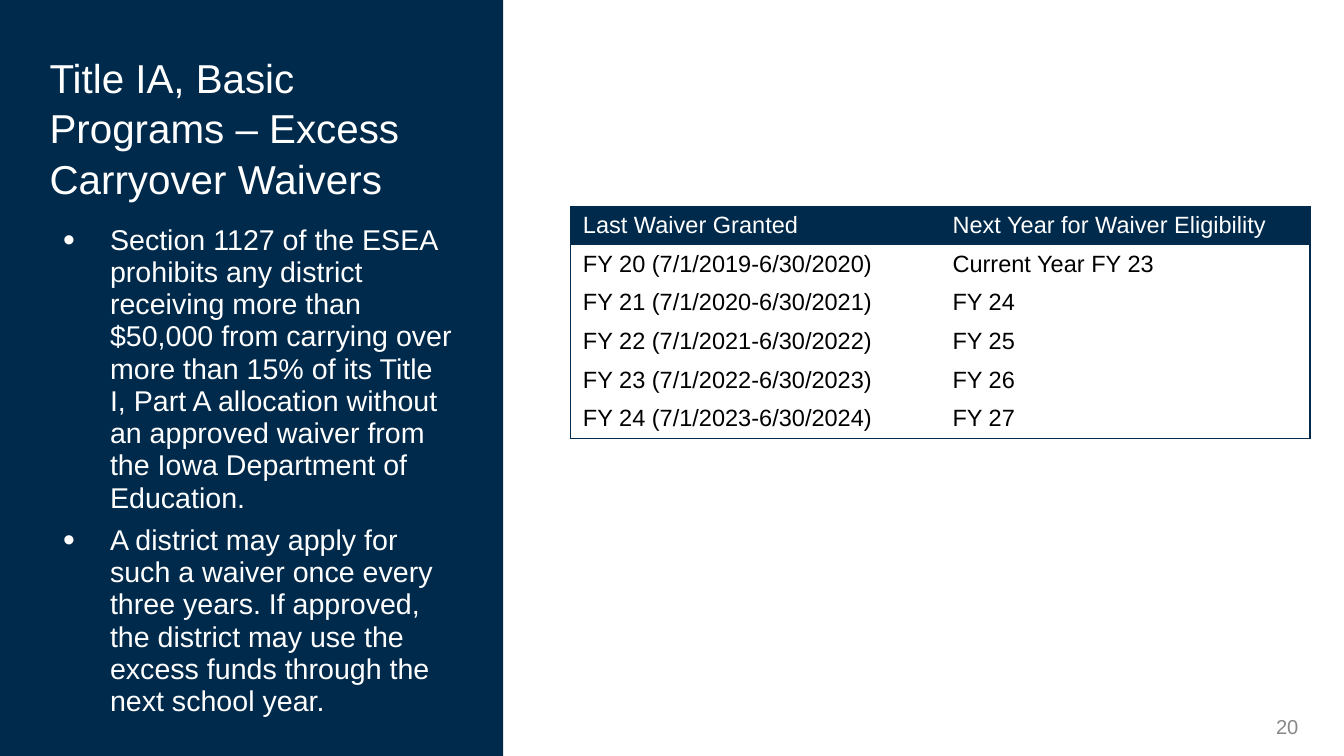
from lxml import etree
from pptx import Presentation
from pptx import util as u
from pptx.dml import color
from pptx.enum import shapes, text
from pptx.oxml import ns

COLORS = {"navy": "002A4B", "white": "FFFFFF", "black": "000000", "gray": "888888"}
TITLE = "Title IA, Basic Programs – Excess Carryover Waivers"
POINTS = [
    "Section 1127 of the ESEA prohibits any district receiving more than $50,000 from "
    "carrying over more than 15% of its Title I, Part A allocation without an approved "
    "waiver from the Iowa Department of Education.",
    "A district may apply for such a waiver once every three years. If approved, the "
    "district may use the excess funds through the next school year.",
]
WAIVERS = [
    ("Last Waiver Granted", "Next Year for Waiver Eligibility"),
    ("FY 20 (7/1/2019-6/30/2020)", "Current Year FY 23"),
    ("FY 21 (7/1/2020-6/30/2021)", "FY 24"),
    ("FY 22 (7/1/2021-6/30/2022)", "FY 25"),
    ("FY 23 (7/1/2022-6/30/2023)", "FY 26"),
    ("FY 24 (7/1/2023-6/30/2024)", "FY 27"),
]


def rgb(name):
    """Return the named colour."""
    return color.RGBColor.from_string(COLORS[name])


def apply(target, values):
    """Set each attribute in values on target."""
    for name, value in values.items():
        setattr(target, name, value)


def place(shape, box):
    """Move and size a shape to a box in points."""
    apply(shape, dict(zip(("left", "top", "width", "height"), map(u.Pt, box))))


def write(frame, lines, size, shade, para_values):
    """Fill a text frame with one paragraph for each line."""
    frame.text = "\n".join(lines)
    for para in frame.paragraphs:
        apply(para, para_values)
        for span in para.runs:
            apply(span.font, {"name": "Arial", "size": u.Pt(size), "bold": False})
            span.font.color.rgb = rgb(shade)


def frame_values(anchor):
    """Return the common text frame settings."""
    return {"word_wrap": True, "auto_size": text.MSO_AUTO_SIZE.NONE,
            "vertical_anchor": anchor,
            "margin_left": u.Pt(7.2), "margin_right": u.Pt(7.2),
            "margin_top": u.Pt(3.6), "margin_bottom": u.Pt(3.6)}


def add_panel(page, box, shade, depth):
    """Add a plain panel at the given depth behind the text."""
    panel = page.shapes.add_shape(shapes.MSO_SHAPE.RECTANGLE, *map(u.Pt, box))
    panel.shadow.inherit = False
    panel.fill.solid()
    panel.fill.fore_color.rgb = rgb(shade)
    panel.line.fill.background()
    panel.element.getparent().insert(2 + depth, panel.element)


def add_bullet(para):
    """Give a paragraph a hanging white bullet."""
    props = para._p.get_or_add_pPr()
    apply_indent = {"marL": u.Pt(36), "indent": u.Pt(-28)}
    for name, value in apply_indent.items():
        props.set(name, str(int(value)))
    tint = etree.SubElement(props, ns.qn("a:buClr"))
    etree.SubElement(tint, ns.qn("a:srgbClr"), val=COLORS["white"])
    etree.SubElement(props, ns.qn("a:buSzPct"), val="118000")
    etree.SubElement(props, ns.qn("a:buFont"), typeface="Arial")
    etree.SubElement(props, ns.qn("a:buChar"), char="•")


def fill_sidebar(page, box):
    """Place the title and the bullet list in the sidebar."""
    left, top, width, height = box
    title, body = page.shapes.title, page.placeholders[1]
    title_height = 103
    place(title, (left, top, width, title_height))
    place(body, (left, top + title_height, width, height - title_height))
    for shape in (title, body):
        apply(shape.text_frame, frame_values(text.MSO_ANCHOR.TOP))
    aligned = {"alignment": text.PP_ALIGN.LEFT}
    write(title.text_frame, [TITLE], 24, "white",
          {**aligned, "line_spacing": 1.04, "space_before": u.Pt(0)})
    write(body.text_frame, POINTS, 17, "white",
          {**aligned, "line_spacing": 0.94, "space_before": u.Pt(6)})
    for para in body.text_frame.paragraphs:
        add_bullet(para)


def set_borders(cell, sides):
    """Draw the named sides of a cell and hide the others."""
    props = cell._tc.get_or_add_tcPr()
    for position, side in enumerate("LRTB"):
        line = etree.Element(ns.qn(f"a:ln{side}"), w=str(int(u.Pt(0.75))))
        if side in sides:
            fill = etree.SubElement(line, ns.qn("a:solidFill"))
            etree.SubElement(fill, ns.qn("a:srgbClr"), val=COLORS["navy"])
        else:
            etree.SubElement(line, ns.qn("a:noFill"))
        props.insert(position, line)


def add_waiver_table(page, box):
    """Add the waiver table with a navy header and outline."""
    rows, columns = len(WAIVERS), len(WAIVERS[0])
    table = page.shapes.add_table(rows, columns, *map(u.Pt, box)).table
    table.horz_banding = False
    for row in table.rows:
        row.height = u.Pt(box[3] / rows)
    for r, values in enumerate(WAIVERS):
        for c, value in enumerate(values):
            cell = table.cell(r, c)
            apply(cell, {"margin_top": u.Pt(3.4), "margin_bottom": u.Pt(3.4)})
            write(cell.text_frame, [value], 14, "black" if r else "white", {})
            cell.fill.solid()
            cell.fill.fore_color.rgb = rgb("white" if r else "navy")
            edges = {"L": c == 0, "R": c == columns - 1, "T": r == 0, "B": r == rows - 1}
            set_borders(cell, [side for side, outer in edges.items() if outer])


def add_page_number(page, box):
    """Add the page number at the right of its box."""
    frame = page.shapes.add_textbox(*map(u.Pt, box)).text_frame
    apply(frame, frame_values(text.MSO_ANCHOR.MIDDLE))
    write(frame, ["20"], 12, "gray", {"alignment": text.PP_ALIGN.RIGHT})


def main():
    """Build the slide and save it."""
    deck = Presentation()
    width, height, sidebar = 800, 450, 299.5
    apply(deck, {"slide_width": u.Pt(width), "slide_height": u.Pt(height)})
    page = deck.slides.add_slide(deck.slide_layouts[1])
    page.background.fill.solid()
    page.background.fill.fore_color.rgb = rgb("navy")
    add_panel(page, (220, 0, width - 220, height), "white", 0)
    add_panel(page, (0, 0, sidebar, height), "navy", 1)
    fill_sidebar(page, (22.3, 27, 255, 397))
    add_waiver_table(page, (339.8, 123, 440, 138))
    add_page_number(page, (721.5, 424, 58.5, 17))
    deck.save("out.pptx")


if __name__ == "__main__":
    main()
